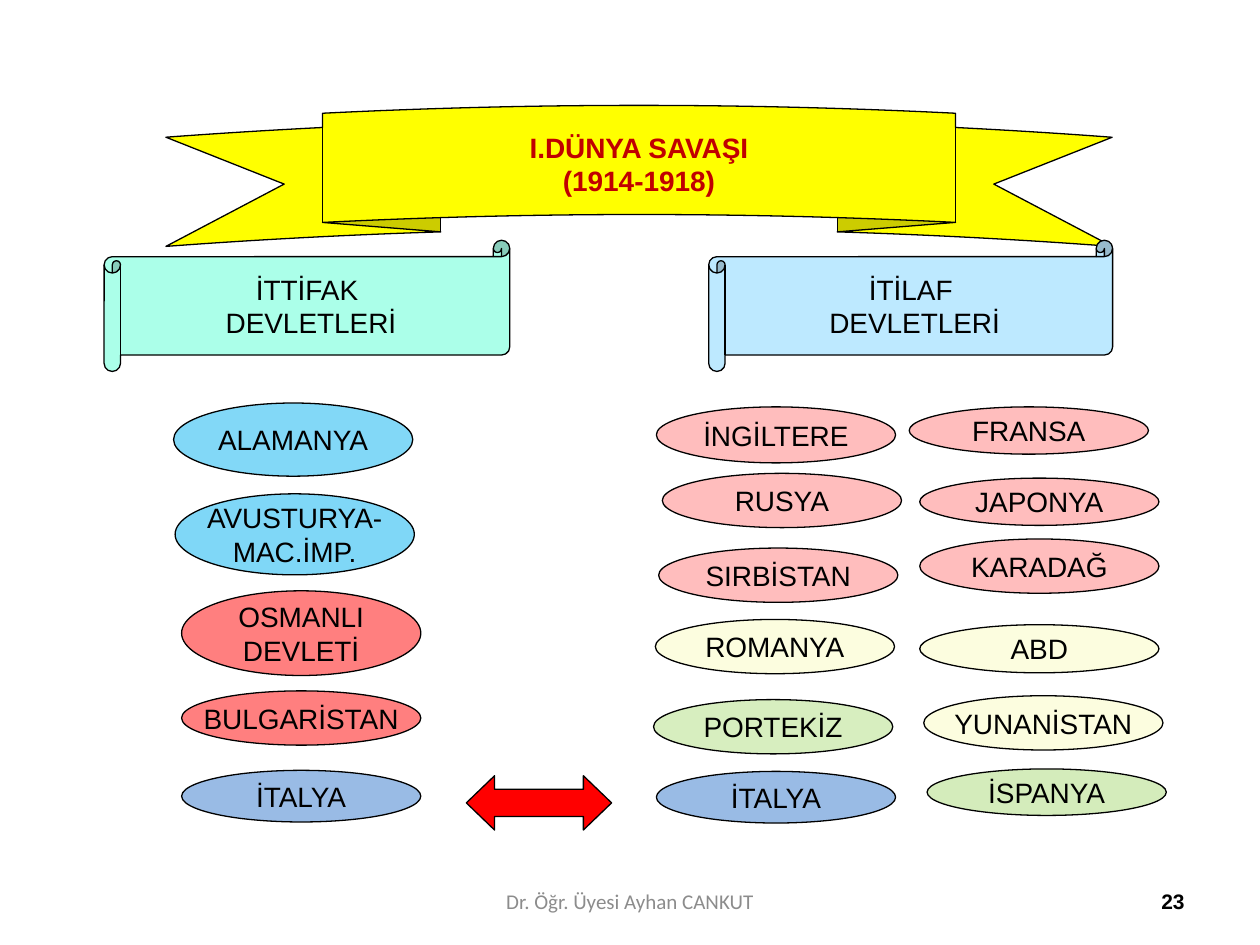
from dataclasses import dataclass

from lxml import etree
from pptx import Presentation
from pptx.dml.color import RGBColor
from pptx.enum import shapes, text
from pptx.oxml import ns
from pptx.util import Pt

KIND = shapes.MSO_SHAPE
ALIGN = text.PP_ALIGN


@dataclass(frozen=True)
class Theme:
    ink: str = "000000"
    title: str = "C00000"
    muted: str = "8C8C8C"
    ribbon: str = "FFFF00"
    arrow: str = "FF0000"
    mint: str = "ABFFE9"
    sky: str = "BDE9FF"
    blue: str = "00B0F0"
    red: str = "FF0000"
    pink: str = "FFBDBD"
    cream: str = "FCFDDF"
    green: str = "92D050"
    steel: str = "558ED5"
    font: str = "Arial"
    plain: str = "Calibri"
    body: float = 16
    small: float = 12
    line: float = 0.75


@dataclass(frozen=True)
class Style:
    color: str
    size: float
    font: str
    bold: bool = False
    align: ALIGN = ALIGN.CENTER


@dataclass(frozen=True)
class Box:
    left: float
    top: float
    width: float
    height: float

    def points(self) -> list:
        return [Pt(n) for n in (self.left, self.top, self.width, self.height)]


@dataclass(frozen=True)
class State:
    name: str
    left: float
    top: float
    height: float
    fill: str
    alpha: int = 100


THEME = Theme()
BODY = Style(THEME.ink, THEME.body, THEME.font)
TITLE = Style(THEME.title, THEME.body, THEME.font, True)
NUMBER = Style(THEME.ink, THEME.small, THEME.font, True, ALIGN.RIGHT)
FOOTER = Style(THEME.muted, THEME.small, THEME.plain)
OVAL = 136.7

STATES = [
    State("ALAMANYA", 99.2, 230.3, 41.8, THEME.blue, 49),
    State("AVUSTURYA-\nMAC.İMP.", 100.1, 282.2, 46.3, THEME.blue, 50),
    State("OSMANLI\nDEVLETİ", 103.8, 337.6, 48.4, THEME.red, 50),
    State("BULGARİSTAN", 103.8, 394.8, 31, THEME.red, 50),
    State("İTALYA", 103.8, 440.2, 29.5, THEME.steel, 60),
    State("İNGİLTERE", 375.1, 232.5, 32, THEME.pink),
    State("RUSYA", 378.5, 270.5, 31, THEME.pink),
    State("SIRBİSTAN", 376.4, 313.2, 31, THEME.pink),
    State("ROMANYA", 374.5, 354, 31, THEME.cream),
    State("PORTEKİZ", 373.5, 399.8, 31, THEME.green, 36),
    State("İTALYA", 375.1, 440.8, 29.5, THEME.steel, 60),
    State("FRANSA", 519.6, 232.5, 27, THEME.pink),
    State("JAPONYA", 525.6, 273.2, 27, THEME.pink),
    State("KARADAĞ", 525.6, 308, 31, THEME.pink),
    State("ABD", 525.6, 357, 27.5, THEME.cream),
    State("YUNANİSTAN", 527.9, 397.6, 31, THEME.cream),
    State("İSPANYA", 529.8, 439.4, 26.6, THEME.green, 39),
]


def write(shape, words: str, style: Style, wrap: bool = False) -> None:
    frame = shape.text_frame
    frame.text = words
    frame.word_wrap = wrap
    frame.vertical_anchor = text.MSO_ANCHOR.MIDDLE
    for para in frame.paragraphs:
        para.alignment = style.align
        for run in para.runs:
            font = run.font
            font.name = style.font
            font.size = Pt(style.size)
            font.bold = style.bold
            font.color.rgb = RGBColor.from_string(style.color)


def draw(slide, kind: KIND, box: Box, fill: str, words: str = "",
         style: Style = BODY, alpha: int = 100, adjust: tuple = ()) -> None:
    shape = slide.shapes.add_shape(kind, *box.points())
    shape.shadow.inherit = False
    for i, value in enumerate(adjust):
        shape.adjustments[i] = value
    shape.fill.solid()
    shape.fill.fore_color.rgb = RGBColor.from_string(fill)
    if alpha < 100:
        color = shape.fill._xPr.find(ns.qn("a:solidFill"))[0]
        etree.SubElement(color, ns.qn("a:alpha"), val=str(alpha * 1000))
    shape.line.color.rgb = RGBColor.from_string(THEME.ink)
    shape.line.width = Pt(THEME.line)
    if words:
        write(shape, words, style)


def label(slide, box: Box, words: str, style: Style) -> None:
    write(slide.shapes.add_textbox(*box.points()), words, style, True)


def main() -> None:
    deck = Presentation()
    deck.slide_width, deck.slide_height = Pt(720), Pt(540)
    slide = deck.slides.add_slide(deck.slide_layouts[6])

    draw(slide, KIND.CURVED_UP_RIBBON, Box(94.8, 60.2, 540.7, 80.6),
         THEME.ribbon, "I.DÜNYA SAVAŞI\n(1914-1918)", TITLE,
         adjust=(0.226, 0.669, 0.125))
    for left, width, fill, name in (
            (59.5, 231.8, THEME.mint, "İTTİFAK "),
            (405, 230.8, THEME.sky, "İTİLAF ")):
        draw(slide, KIND.HORIZONTAL_SCROLL, Box(left, 137.3, width, 75),
             fill, name + "\nDEVLETLERİ", adjust=(0.125,))
    for state in STATES:
        draw(slide, KIND.OVAL, Box(state.left, state.top, OVAL, state.height),
             state.fill, state.name, alpha=state.alpha)
    draw(slide, KIND.LEFT_RIGHT_ARROW, Box(266.5, 443.3, 83, 31),
         THEME.arrow, adjust=(0.5, 0.52))

    label(slide, Box(246, 500.5, 228, 28.8), "Dr. Öğr. Üyesi Ayhan CANKUT", FOOTER)
    label(slide, Box(516, 500.5, 168, 28.8), "23", NUMBER)
    deck.save("out.pptx")


if __name__ == "__main__":
    main()
